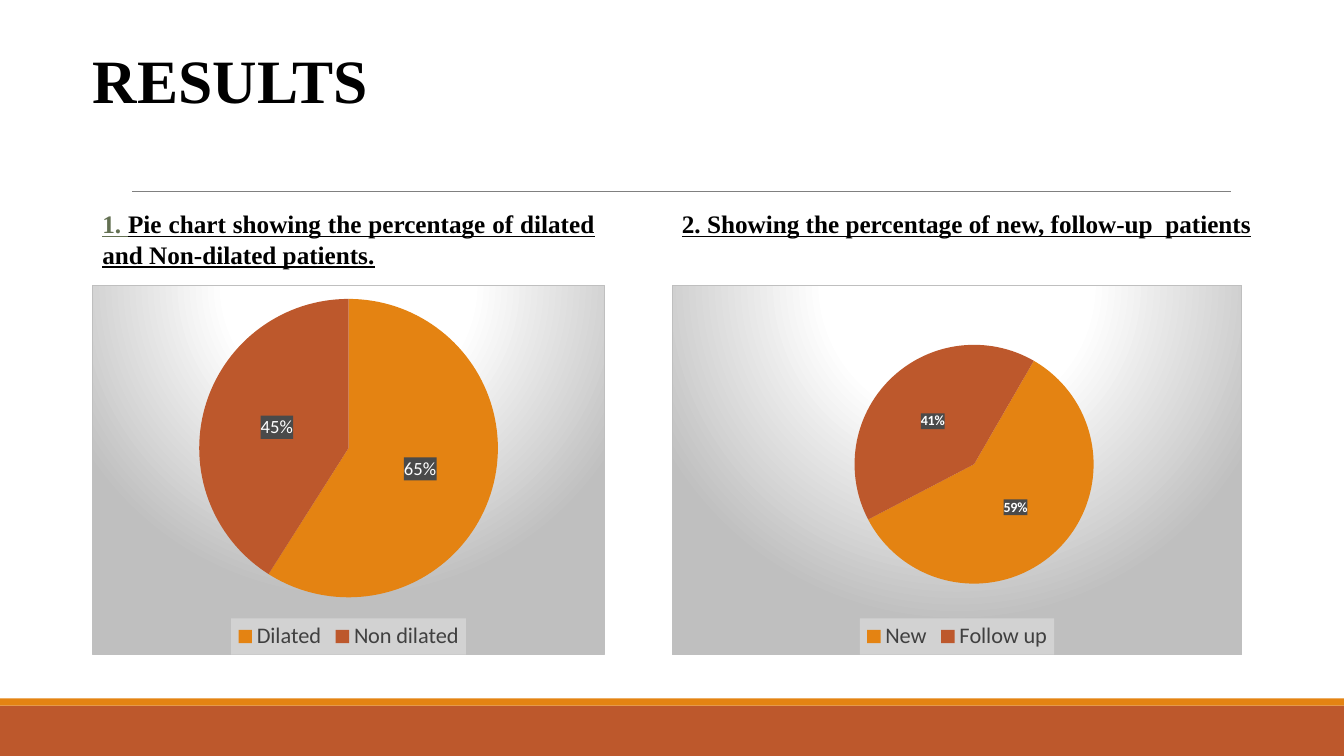
from dataclasses import dataclass

from lxml import etree
from pptx import Presentation
from pptx.chart.data import CategoryChartData
from pptx.dml.color import RGBColor
from pptx.enum.chart import XL_CHART_TYPE, XL_LABEL_POSITION, XL_LEGEND_POSITION
from pptx.enum.shapes import MSO_CONNECTOR, MSO_SHAPE
from pptx.enum.text import PP_ALIGN
from pptx.oxml import parse_xml
from pptx.oxml.ns import nsdecls, qn
from pptx.util import Pt

PIE = XL_CHART_TYPE.PIE
CENTER = XL_LABEL_POSITION.CENTER
BOTTOM = XL_LEGEND_POSITION.BOTTOM
RECTANGLE = MSO_SHAPE.RECTANGLE
STRAIGHT = MSO_CONNECTOR.STRAIGHT
LEFT, JUSTIFY = PP_ALIGN.LEFT, PP_ALIGN.JUSTIFY
EMU_PER_PX = 9525


@dataclass(frozen=True)
class Theme:
    serif: str = "Times New Roman"
    sans: str = "Calibri"
    ink: str = "000000"
    green: str = "637052"
    orange: str = "E48312"
    rust: str = "BD582C"
    rule: str = "808080"
    white: str = "FFFFFF"
    silver: str = "BFBFBF"
    legend_ink: str = "404040"
    legend_fill: str = "F2F2F2"
    label_fill: str = "4A4A4A"
    title_size: float = 44
    caption_size: float = 18
    legend_size: float = 16
    large_label: float = 13.3
    small_label: float = 10


def px(*lengths):
    return [length * EMU_PER_PX for length in lengths]


def rgb(value):
    return RGBColor.from_string(value)


def shape_properties(inner):
    return parse_xml(f'<c:spPr {nsdecls("c", "a")}>{inner}</c:spPr>')


def solid(color, alpha=100):
    return (f'<a:solidFill><a:srgbClr val="{color}">'
            f'<a:alpha val="{alpha * 1000}"/></a:srgbClr></a:solidFill>')


class SlideBuilder:
    def __init__(self, slide, theme):
        self.slide = slide
        self.theme = theme

    def style(self, font, size, color, face, bold=False):
        font.size, font.name, font.bold = Pt(size), face, bold
        font.color.rgb = rgb(color)

    def band(self, top, height, color):
        band = self.slide.shapes.add_shape(RECTANGLE, *px(0, top, 1280, height))
        band.shadow.inherit = False
        band.fill.solid()
        band.fill.fore_color.rgb = rgb(color)
        band.line.fill.background()

    def rule(self, left, right, y):
        rule = self.slide.shapes.add_connector(STRAIGHT, *px(left, y, right, y))
        rule.line.color.rgb = rgb(self.theme.rule)
        rule.line.width = Pt(0.5)
        etree.SubElement(rule.element.spPr, qn("a:effectLst"))

    def text(self, box, pieces, size, align=LEFT, underline=False):
        """Write one paragraph from (text, colour) pieces."""
        frame = self.slide.shapes.add_textbox(*px(*box)).text_frame
        frame.word_wrap = True
        paragraph = frame.paragraphs[0]
        paragraph.alignment = align
        self.style(paragraph.font, size, self.theme.ink, self.theme.serif, True)
        paragraph.font.underline = underline
        for words, color in pieces:
            run = paragraph.add_run()
            run.text = words
            run.font.color.rgb = rgb(color)

    def pie(self, box, shares, label_size, label_texts=(), start=0, plot_area=None):
        theme = self.theme
        data = CategoryChartData()
        data.categories = list(shares)
        data.add_series("Series 1", list(shares.values()))
        chart = self.slide.shapes.add_chart(PIE, *px(*box), data).chart
        chart.has_title = False
        self.style(chart.font, 10, theme.ink, theme.sans)
        self.chart_background(chart)
        self.legend(chart)

        plot = chart.plots[0]
        plot.vary_by_categories = True
        series = plot.series[0]
        for index, color in enumerate((theme.orange, theme.rust)):
            fill = series.points[index].format.fill
            fill.solid()
            fill.fore_color.rgb = rgb(color)
        self.labels(series, label_size, label_texts)

        pie_xml = chart.element.find(".//" + qn("c:pieChart"))
        for old in pie_xml.findall(qn("c:firstSliceAng")):
            pie_xml.remove(old)
        etree.SubElement(pie_xml, qn("c:firstSliceAng")).set("val", str(start))
        if plot_area:
            self.place_plot(pie_xml.getparent(), plot_area)

    def chart_background(self, chart):
        theme = self.theme
        stops = "".join(
            f'<a:gs pos="{at * 1000}"><a:srgbClr val="{color}"/></a:gs>'
            for at, color in ((0, theme.white), (39, theme.white), (100, theme.silver)))
        chart.element.find(qn("c:chart")).addnext(shape_properties(
            f'<a:gradFill><a:gsLst>{stops}</a:gsLst><a:path path="circle">'
            '<a:fillToRect l="50000" t="-80000" r="50000" b="180000"/></a:path>'
            f'</a:gradFill><a:ln w="9525">{solid(theme.silver)}</a:ln>'))

    def legend(self, chart):
        theme = self.theme
        chart.has_legend = True
        legend = chart.legend
        legend.position = BOTTOM
        legend.include_in_layout = False
        self.style(legend.font, theme.legend_size, theme.legend_ink, theme.sans)
        legend._element.find(qn("c:txPr")).addprevious(
            shape_properties(solid(theme.legend_fill, 39)))

    def labels(self, series, size, texts):
        theme = self.theme
        labels = series.data_labels
        labels.show_percentage, labels.show_value = True, False
        labels.position = CENTER
        self.style(labels.font, size, theme.white, theme.sans, True)
        labels._element.find(qn("c:txPr")).addprevious(
            shape_properties(solid(theme.label_fill)))
        for index, words in enumerate(texts):
            label = series.points[index].data_label
            run = label.text_frame.paragraphs[0].add_run()
            run.text = words
            self.style(run.font, size, theme.white, theme.sans)
            label.position = CENTER
        for rich_text in labels._element.findall(qn("c:dLbl") + "/" + qn("c:tx")):
            rich_text.addnext(shape_properties(solid(theme.label_fill)))

    def place_plot(self, plot_xml, area):
        """Fix the inner plot area as fractions of the chart."""
        for old in plot_xml.findall(qn("c:layout")):
            plot_xml.remove(old)
        sizes = "".join(f'<c:{key} val="{value}"/>' for key, value in zip("xywh", area))
        plot_xml.insert(0, parse_xml(
            f'<c:layout {nsdecls("c")}><c:manualLayout><c:layoutTarget val="inner"/>'
            f'<c:xMode val="edge"/><c:yMode val="edge"/>{sizes}'
            '</c:manualLayout></c:layout>'))


def main():
    deck = Presentation()
    deck.slide_width, deck.slide_height = px(1280, 720)
    theme = Theme()
    page = SlideBuilder(deck.slides.add_slide(deck.slide_layouts[6]), theme)

    page.band(672, 48, theme.rust)
    page.band(665, 7, theme.orange)
    page.rule(126, 1172, 182)

    page.pie((88, 271, 488, 353), {"Dilated": 59, "Non dilated": 41},
             theme.large_label, label_texts=("65%", "45%"))
    page.pie((640, 271, 543, 353), {"New": 59, "Follow up": 41},
             theme.small_label, start=30, plot_area=(0.32, 0.14, 0.42, 0.69))

    page.text((640, 194, 602, 38),
              [("2. Showing the percentage of new, follow-up  patients", theme.ink)],
              theme.caption_size, JUSTIFY, underline=True)
    page.text((88, 194, 488, 87),
              [("1. ", theme.green),
               ("Pie chart showing the percentage of dilated and Non-dilated patients.",
                theme.ink)],
              theme.caption_size, JUSTIFY, underline=True)
    page.text((79, 35, 640, 81), [("RESULTS", theme.ink)], theme.title_size)

    deck.save("out.pptx")


if __name__ == "__main__":
    main()
